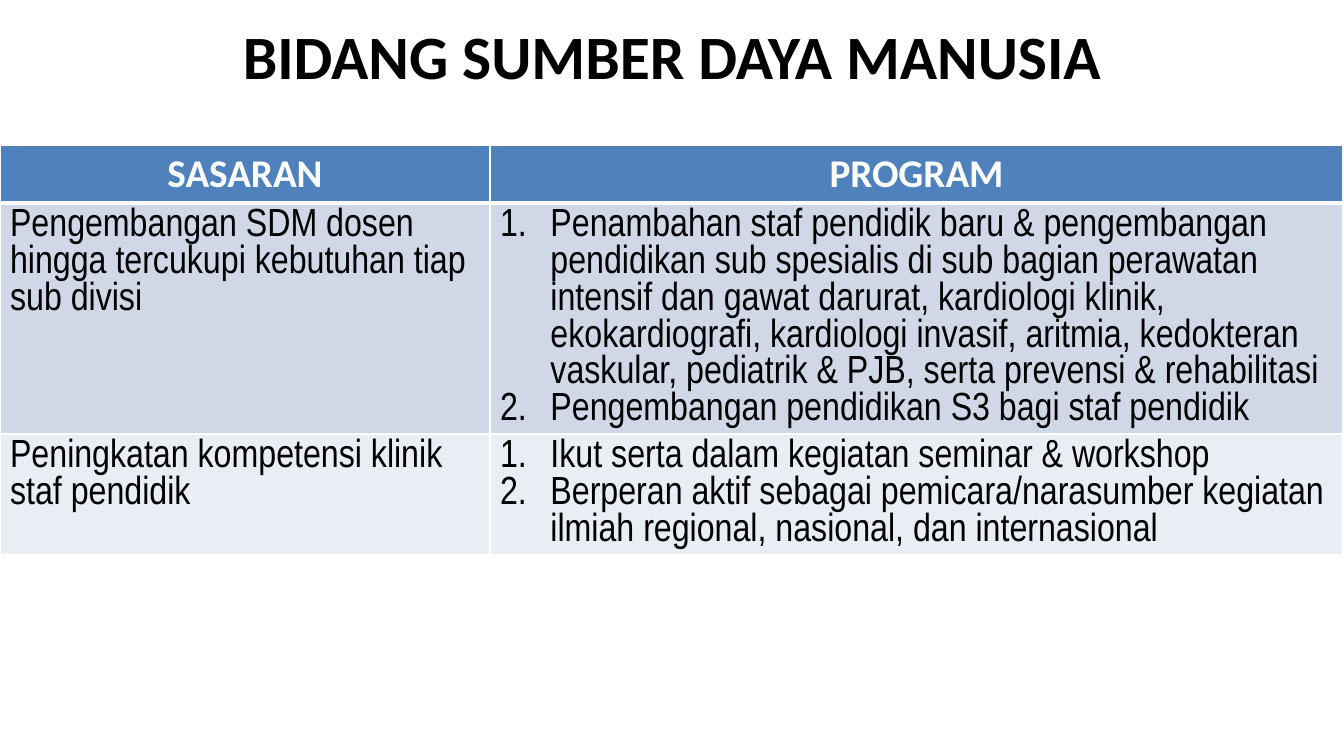
from lxml import etree
from pptx import Presentation
from pptx.dml.color import RGBColor
from pptx.enum.text import MSO_ANCHOR, MSO_AUTO_SIZE, PP_ALIGN
from pptx.oxml.ns import qn
from pptx.util import Inches, Pt

CENTER = PP_ALIGN.CENTER
LEFT = PP_ALIGN.LEFT
MIDDLE = MSO_ANCHOR.MIDDLE
NO_FIT = MSO_AUTO_SIZE.NONE

TITLE = "BIDANG SUMBER DAYA MANUSIA"
HEADS = ["SASARAN", "PROGRAM"]
ROWS = [
    ("Pengembangan SDM dosen hingga tercukupi kebutuhan tiap sub divisi",
     ["Penambahan staf pendidik baru & pengembangan pendidikan sub spesialis "
      "di sub bagian perawatan intensif dan gawat darurat, kardiologi klinik, "
      "ekokardiografi, kardiologi invasif, aritmia, kedokteran vaskular, "
      "pediatrik & PJB, serta prevensi & rehabilitasi",
      "Pengembangan pendidikan S3 bagi staf pendidik"]),
    ("Peningkatan kompetensi klinik staf pendidik",
     ["Ikut serta dalam kegiatan seminar & workshop",
      "Berperan aktif sebagai pemicara/narasumber kegiatan ilmiah regional, "
      "nasional, dan internasional"]),
]
COLS = [4.86, 8.46]
HIGHS = [0.56, 2.29, 1.18]
BANDS = ["D0D8E8", "E9EDF4"]


def paint(color):
    return RGBColor.from_string(color)


def style(para, face, size, color, bold, align):
    para.alignment = align
    for run in para.runs:
        font = run.font
        font.name, font.size, font.bold = face, Pt(size), bold
        font.color.rgb = paint(color)


def number(para):
    props = para._p.get_or_add_pPr()
    props.set("marL", str(Inches(0.5)))
    props.set("indent", str(-Inches(0.5)))
    etree.SubElement(props, qn("a:buFont"), typeface="+mj-lt")
    etree.SubElement(props, qn("a:buAutoNum"), type="arabicPeriod")


def frame(cell, top, base):
    """Draw white borders; top and base are widths in points."""
    props = cell._tc.get_or_add_tcPr()
    for side, width in zip("LRTB", (1, 1, top, base)):
        line = etree.SubElement(props, qn("a:ln" + side), w=str(Pt(width)))
        fill = etree.SubElement(line, qn("a:solidFill"))
        etree.SubElement(fill, qn("a:srgbClr"), val="FFFFFF")


def add_title(slide, left, top, width, height):
    title = slide.shapes.title
    title.left, title.top = Inches(left), Inches(top)
    title.width, title.height = Inches(width), Inches(height)
    text = title.text_frame
    text.text = TITLE
    text.word_wrap = True
    text.auto_size = NO_FIT
    text.vertical_anchor = MIDDLE
    style(text.paragraphs[0], "Calibri", 44, "000000", True, CENTER)


def fill_head(cell, text):
    frame(cell, 1, 3)
    cell.fill.solid()
    cell.fill.fore_color.rgb = paint("4F81BD")
    cell.text_frame.text = text
    style(cell.text_frame.paragraphs[0], "Calibri", 28, "FFFFFF", True, CENTER)


def fill_body(cell, items, band, top, listed):
    frame(cell, top, 1)
    cell.fill.solid()
    cell.fill.fore_color.rgb = paint(band)
    cell.text_frame.text = "\n".join(items)
    for para in cell.text_frame.paragraphs:
        if listed:
            number(para)
        style(para, "Arial Narrow", 28, "000000", False, LEFT)


def add_grid(slide, left, top):
    table = slide.shapes.add_table(
        len(HIGHS), len(COLS), Inches(left), Inches(top),
        Inches(sum(COLS)), Inches(sum(HIGHS))).table
    for col, width in zip(table.columns, COLS):
        col.width = Inches(width)
    for row, height in zip(table.rows, HIGHS):
        row.height = Inches(height)
    for col, head in enumerate(HEADS):
        fill_head(table.cell(0, col), head)
    for row, (goal, plans) in enumerate(ROWS, 1):
        band, edge = BANDS[row - 1], 3 if row == 1 else 1
        fill_body(table.cell(row, 0), [goal], band, edge, False)
        fill_body(table.cell(row, 1), plans, band, edge, True)


def main():
    deck = Presentation()
    deck.slide_width, deck.slide_height = Inches(13.33), Inches(7.5)
    slide = deck.slides.add_slide(deck.slide_layouts[5])
    add_title(slide, 0.67, 0.23, 12, 0.62)
    add_grid(slide, 0, 1.44)
    deck.save("out.pptx")


if __name__ == "__main__":
    main()
